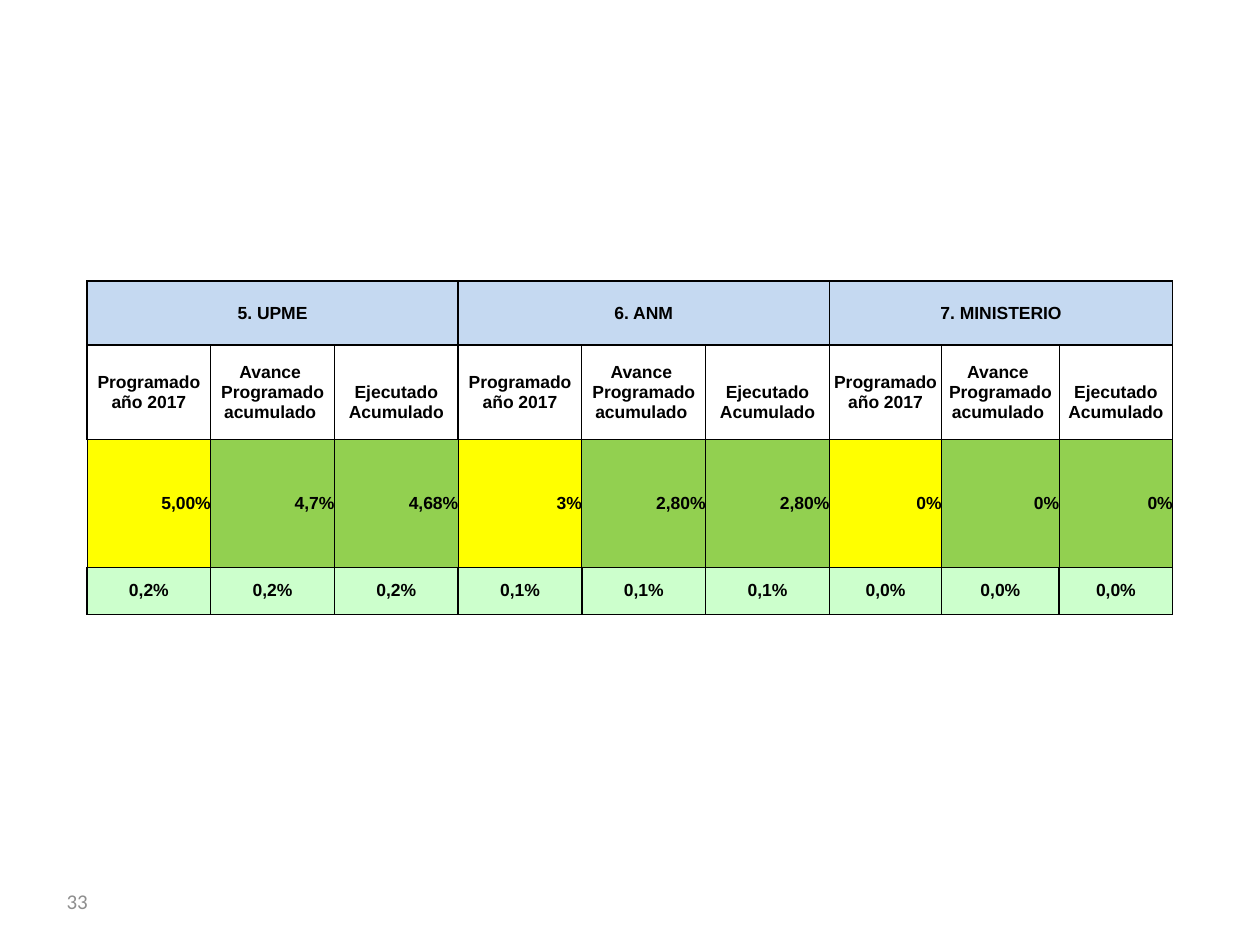
from dataclasses import dataclass

from lxml import etree
from pptx import Presentation
from pptx.dml.color import RGBColor
from pptx.enum.text import MSO_ANCHOR, PP_ALIGN
from pptx.oxml.ns import qn
from pptx.util import Inches, Pt

CENTER, RIGHT = PP_ALIGN.CENTER, PP_ALIGN.RIGHT
MIDDLE = MSO_ANCHOR.MIDDLE
NO_STYLE = "{2D5ABB26-0587-4C30-8999-92F81FD0307C}"


@dataclass(frozen=True)
class Theme:
    table_font: str = "Arial"
    number_font: str = "Calibri"
    table_size: float = 10
    number_size: float = 12
    ink: str = "000000"
    muted: str = "8E8E8E"
    agency: str = "C5D9F1"
    planned: str = "FFFF00"
    progress: str = "92D050"
    weighted: str = "CCFFCC"
    thin: float = 0.5
    thick: float = 1


THEME = Theme()
SLIDE_W, SLIDE_H = 10, 7.5
TABLE_LEFT, TABLE_TOP, TABLE_W = 0.69, 2.23, 8.62
COLUMN_SHARES = [0.98] * 6 + [0.89, 0.93, 0.9]
ROW_HEIGHTS = [0.51, 0.75, 1.01, 0.38, 0.51, 0.51, 0.21, 0.4]
GROUP = 3
LINE_HEIGHT = 0.16

AGENCIES = ["5. UPME", "6. ANM", "7. MINISTERIO"]
MEASURES = ["Programado año 2017", "Avance \vProgramado acumulado ", "Ejecutado Acumulado"]
PERCENTAGES = ["5,00%", "4,7%", "4,68%", "3%", "2,80%", "2,80%", "0%", "0%", "0%"]
WEIGHTED = ["0,2%"] * 3 + ["0,1%"] * 3 + ["0,0%"] * 3


def apply_format(target, values):
    for name, value in values.items():
        setattr(target, name, value)


def style_run(run, font, size, color, bold=False):
    apply_format(run.font, {"name": font, "size": Pt(size), "bold": bold})
    run.font.color.rgb = RGBColor.from_string(color)


def draw_borders(cell, widths):
    """Draw cell borders; widths are points for left, right, top and bottom."""
    properties = cell._tc.get_or_add_tcPr()
    for side, width in zip("LRTB", widths):
        line = etree.SubElement(properties, qn(f"a:ln{side}"), w=str(Pt(width)))
        fill = etree.SubElement(line, qn("a:solidFill"))
        etree.SubElement(fill, qn("a:srgbClr"), val=THEME.ink)


def fill_cell(cell, color):
    if color:
        cell.fill.solid()
        cell.fill.fore_color.rgb = RGBColor.from_string(color)
    else:
        cell.fill.background()


def write_cell(cell, text, align=CENTER, top=0):
    cell.text = text
    paragraph = cell.text_frame.paragraphs[0]
    paragraph.alignment = align
    for run in paragraph.runs:
        style_run(run, THEME.table_font, THEME.table_size, THEME.ink, bold=True)
    for line_break in paragraph._p.findall(qn("a:br")):
        etree.SubElement(line_break, qn("a:rPr"), sz=str(int(THEME.table_size * 100)))
    cell.margin_top = Inches(top)


def prepare_cell(cell):
    apply_format(cell, {"margin_left": 0, "margin_right": 0, "margin_top": 0,
                        "margin_bottom": 0, "vertical_anchor": MIDDLE})


def add_grid(slide):
    frame = slide.shapes.add_table(
        len(ROW_HEIGHTS), len(COLUMN_SHARES), Inches(TABLE_LEFT), Inches(TABLE_TOP),
        Inches(TABLE_W), Inches(sum(ROW_HEIGHTS)))
    table = frame.table
    apply_format(table, {"first_row": False, "horz_banding": False})
    table._tbl.tblPr.find(qn("a:tableStyleId")).text = NO_STYLE
    for column, share in zip(table.columns, COLUMN_SHARES):
        column.width = Inches(TABLE_W * share / sum(COLUMN_SHARES))
    for row, height in zip(table.rows, ROW_HEIGHTS):
        row.height = Inches(height)
    for cell in table.iter_cells():
        prepare_cell(cell)
    return table


def fill_agencies(table):
    for column in range(len(COLUMN_SHARES)):
        cell = table.cell(0, column)
        draw_borders(cell, [THEME.thick] * 4)
        fill_cell(cell, THEME.agency)
    for index, agency in enumerate(AGENCIES):
        first = index * GROUP
        table.cell(0, first).merge(table.cell(0, first + GROUP - 1))
        write_cell(table.cell(0, first), agency)


def fill_columns(table):
    thin, thick = THEME.thin, THEME.thick
    last = len(COLUMN_SHARES) - 1
    for column, (percentage, weighted) in enumerate(zip(PERCENTAGES, WEIGHTED)):
        place = column % GROUP
        opens, closes = place == 0, place == GROUP - 1

        measure = table.cell(1, column)
        draw_borders(measure, [thick if opens else thin, thick if closes else thin, thick, thin])
        fill_cell(measure, None)
        write_cell(measure, MEASURES[place], top=LINE_HEIGHT if closes else 0)

        value = table.cell(2, column)
        draw_borders(value, [thin] * 4)
        fill_cell(value, THEME.planned if opens else THEME.progress)
        write_cell(value, percentage, RIGHT)

        result = table.cell(3, column)
        draw_borders(result, [thick, thin if column == last else thick, thin, thin])
        fill_cell(result, THEME.weighted)
        write_cell(result, weighted)


def clear_spare_rows(table):
    """Leave the rows below the figures plain, with text small enough for their height."""
    for row in range(4, len(ROW_HEIGHTS)):
        for column in range(len(COLUMN_SHARES)):
            cell = table.cell(row, column)
            fill_cell(cell, None)
            etree.SubElement(cell.text_frame.paragraphs[0]._p, qn("a:endParaRPr"),
                             sz=str(int(THEME.table_size * 100)))


def add_page_number(slide, number):
    box = slide.shapes.add_textbox(Inches(0.43), Inches(6.95), Inches(2.33), Inches(0.4))
    apply_format(box.text_frame, {"word_wrap": True, "vertical_anchor": MIDDLE})
    run = box.text_frame.paragraphs[0].add_run()
    run.text = number
    style_run(run, THEME.number_font, THEME.number_size, THEME.muted)


def main():
    presentation = Presentation()
    apply_format(presentation, {"slide_width": Inches(SLIDE_W), "slide_height": Inches(SLIDE_H)})
    slide = presentation.slides.add_slide(presentation.slide_layouts[6])
    add_page_number(slide, "33")
    table = add_grid(slide)
    fill_agencies(table)
    fill_columns(table)
    clear_spare_rows(table)
    presentation.save("out.pptx")


if __name__ == "__main__":
    main()
